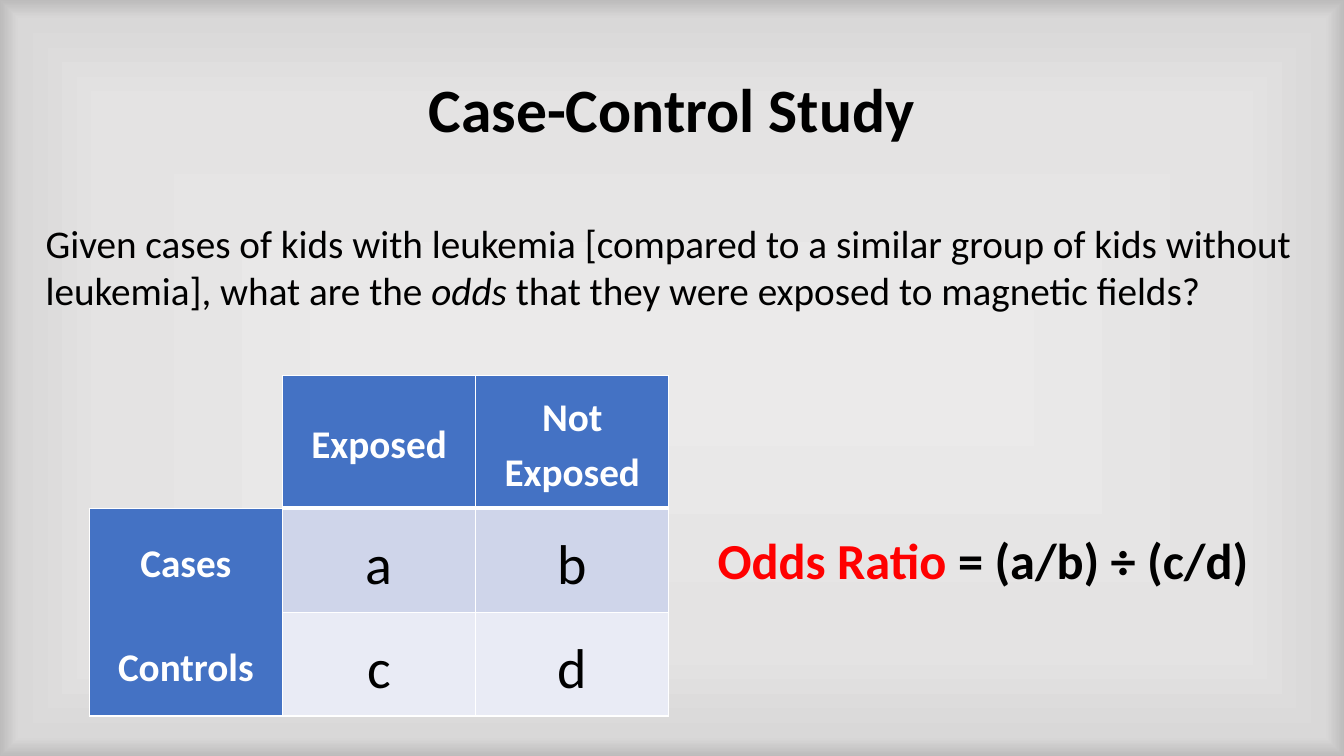
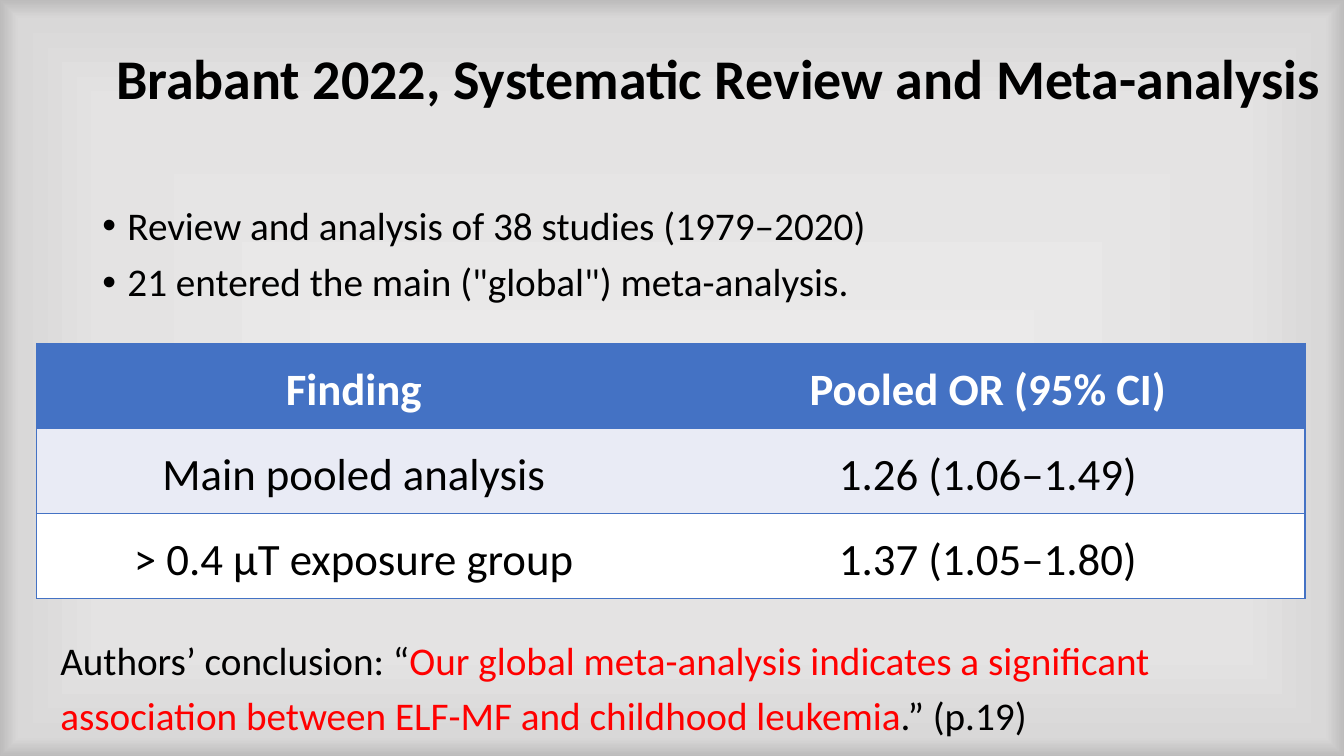
"""Build two slides on case-control evidence for magnetic fields and leukemia."""
from dataclasses import dataclass, replace
from typing import NamedTuple

from lxml import etree
from pptx import Presentation
from pptx.dml.color import RGBColor
from pptx.enum.text import MSO_ANCHOR, PP_ALIGN
from pptx.oxml import parse_xml
from pptx.oxml.ns import nsdecls, qn
from pptx.util import Emu, Pt

EMU_PER_PX = 9525
LEFT, CENTER = PP_ALIGN.LEFT, PP_ALIGN.CENTER
TOP, MIDDLE = MSO_ANCHOR.TOP, MSO_ANCHOR.MIDDLE
BLANK_LAYOUT = 6
SIDES = {"l": "a:lnL", "r": "a:lnR", "t": "a:lnT", "b": "a:lnB"}


@dataclass(frozen=True)
class Theme:
    """Hold the colours and type sizes of the deck."""
    font: str = "Calibri"
    ink: str = "000000"
    paper: str = "FFFFFF"
    accent: str = "4472C4"
    emphasis: str = "FF0000"
    band_dark: str = "CFD5EA"
    band_light: str = "E9EBF5"
    backdrop: tuple = ((0, "EBEAEA"), (72, "E4E3E3"), (95, "D9D8D8"), (100, "BDBCBC"))
    title: int = 44
    long_title: int = 40
    count: int = 40
    formula: int = 36
    finding: int = 32
    body: int = 28
    thin: int = 1
    thick: int = 3


THEME = Theme()


@dataclass(frozen=True)
class Look:
    """Describe the type of a run."""
    size: int
    color: str = THEME.ink
    bold: bool = False
    italic: bool = False


@dataclass(frozen=True)
class Spacing:
    """Describe the setting of a paragraph."""
    align: int = LEFT
    line: float = 1.0
    before: int = 0
    after: int = 0


class Box(NamedTuple):
    """Describe a region in px."""
    left: int
    top: int
    width: int
    height: int

    def region(self, left, top, width, height):
        """Return a box placed relative to this one."""
        return Box(self.left + left, self.top + top, width, height)

    def emu(self):
        """Return the four lengths in EMU."""
        return [px(length) for length in self]


class Entry(NamedTuple):
    """Describe a table cell, with capital edges drawn thick."""
    text: str
    look: Look
    fill: str
    edges: str


PAGE = Box(0, 0, 1280, 720)
BODY = Look(THEME.body)
LOOSE = Spacing(line=1.15, after=8)
CELL = replace(LOOSE, align=CENTER)
HEADING = Spacing(CENTER, 0.9)


def px(length):
    """Turn px into EMU."""
    return Emu(length * EMU_PER_PX)


def set_backdrop(master):
    """Give every slide the shared gradient."""
    master.background.fill.solid()
    holder = master.element.find(".//" + qn("p:bgPr"))
    stops = "".join(
        f'<a:gs pos="{place * 1000}"><a:srgbClr val="{color}"/></a:gs>'
        for place, color in THEME.backdrop)
    gradient = parse_xml(
        f'<a:gradFill {nsdecls("a")} rotWithShape="1"><a:gsLst>{stops}</a:gsLst>'
        '<a:path path="shape"><a:fillToRect l="50000" t="50000" r="50000" b="50000"/>'
        '</a:path></a:gradFill>')
    holder.replace(holder[0], gradient)


def write(paragraph, runs, spacing):
    """Set a paragraph and add its runs."""
    paragraph.alignment = spacing.align
    paragraph.line_spacing = spacing.line
    paragraph.space_before = Pt(spacing.before)
    paragraph.space_after = Pt(spacing.after)
    for words, look in runs:
        run = paragraph.add_run()
        run.text = words
        run.font.name = THEME.font
        run.font.size = Pt(look.size)
        run.font.bold = look.bold
        run.font.italic = look.italic
        run.font.color.rgb = RGBColor.from_string(look.color)


def add_frame(slide, box, anchor=TOP):
    """Add a wrapping text box and return its frame."""
    frame = slide.shapes.add_textbox(*box.emu()).text_frame
    frame.word_wrap = True
    frame.vertical_anchor = anchor
    return frame


def add_statement(slide, box, runs, spacing, anchor=TOP):
    """Add a single paragraph in a box."""
    write(add_frame(slide, box, anchor).paragraphs[0], runs, spacing)


def add_title(slide, box, words, size, anchor):
    """Add a bold centred title."""
    add_statement(slide, box, [(words, Look(size, bold=True))], HEADING, anchor)


def add_bullets(slide, box, points, indent=24):
    """Add a bulleted list."""
    frame = add_frame(slide, box)
    for index, point in enumerate(points):
        paragraph = frame.add_paragraph() if index else frame.paragraphs[0]
        write(paragraph, [(point, BODY)], Spacing(line=0.9, before=10 if index else 0))
        properties = paragraph._p.get_or_add_pPr()
        properties.set("marL", str(px(indent)))
        properties.set("indent", str(px(-indent)))
        etree.SubElement(properties, qn("a:buFont")).set("typeface", "Arial")
        etree.SubElement(properties, qn("a:buChar")).set("char", "•")


def draw_edges(cell, edges, color):
    """Draw the named edges of a cell and clear the others."""
    properties = cell._tc.get_or_add_tcPr()
    for index, (side, tag) in enumerate(SIDES.items()):
        if side in edges.lower():
            weight = THEME.thin if side in edges else THEME.thick
            paint = f'<a:solidFill><a:srgbClr val="{color}"/></a:solidFill>'
        else:
            weight, paint = 0, "<a:noFill/>"
        properties.insert(index, parse_xml(
            f'<{tag} {nsdecls("a")} w="{Pt(weight)}">{paint}</{tag}>'))


def add_grid(slide, box, heights, rows, edge_color):
    """Add a table with equal columns that fill the box."""
    columns = len(rows[0])
    table = slide.shapes.add_table(len(rows), columns, *box.emu()).table
    table.first_row = table.horz_banding = False
    for column in table.columns:
        column.width = px(box.width // columns)
    for row, height, entries in zip(table.rows, heights, rows):
        row.height = px(height)
        for cell, entry in zip(row.cells, entries):
            cell.margin_left = cell.margin_right = px(1)
            cell.margin_top = cell.margin_bottom = px(1)
            cell.vertical_anchor = MIDDLE
            if entry.fill:
                cell.fill.solid()
                cell.fill.fore_color.rgb = RGBColor.from_string(entry.fill)
            else:
                cell.fill.background()
            draw_edges(cell, entry.edges, edge_color)
            runs = [(entry.text, entry.look)] if entry.text else []
            write(cell.text_frame.paragraphs[0], runs, CELL)


def add_exposure_table(slide, box):
    """Add the two-by-two table of cases and controls."""
    label = Look(THEME.body, THEME.paper, True)
    count = Look(THEME.count)
    rows = [
        [Entry("", label, "", "rb")]
        + [Entry(name, label, THEME.accent, "ltrB") for name in ("Exposed", "Not Exposed")],
        [Entry("Cases", label, THEME.accent, "ltr")]
        + [Entry(letter, count, THEME.band_dark, "lTrb") for letter in "ab"],
        [Entry("Controls", label, THEME.accent, "lrb")]
        + [Entry(letter, count, THEME.band_light, "ltrb") for letter in "cd"],
    ]
    add_grid(slide, box, (126, 99, 99), rows, THEME.paper)


def add_findings_table(slide, box):
    """Add the pooled odds ratios."""
    header = Look(THEME.finding, THEME.paper, True)
    plain = Look(THEME.finding)
    findings = (
        ("Finding", "Pooled OR (95% CI)", header, THEME.accent),
        ("Main pooled analysis", "1.26 (1.06–1.49)", plain, THEME.band_light),
        ("> 0.4 µT exposure group", "1.37 (1.05–1.80)", plain, THEME.paper),
    )
    rows = [[Entry(name, look, fill, "ltb"), Entry(ratio, look, fill, "trb")]
            for name, ratio, look, fill in findings]
    add_grid(slide, box, [box.height // len(rows)] * len(rows), rows, THEME.accent)


def case_control_slide(slide, page):
    """Explain the odds ratio of a case-control study."""
    add_title(slide, page.region(88, 38, 1104, 139), "Case-Control Study", THEME.title, MIDDLE)
    add_exposure_table(slide, page.region(85, 358, 552, 324))
    add_statement(slide, page.region(674, 491, 590, 72), [
        ("Odds Ratio ", Look(THEME.formula, THEME.emphasis, True)),
        ("= (a/b) ÷ (c/d)", Look(THEME.formula, bold=True)),
    ], LOOSE)
    add_statement(slide, page.region(34, 204, 1212, 100), [
        ("Given cases of kids with leukemia [compared to a similar group of kids "
         "without leukemia], what are the ", BODY),
        ("odds", replace(BODY, italic=True)),
        (" that they were exposed to magnetic fields?", BODY),
    ], Spacing())


def review_slide(slide, page):
    """Report the findings of the systematic review."""
    add_title(slide, page.region(88, 44, 1192, 133),
              "Brabant 2022, Systematic Review and Meta-analysis", THEME.long_title, TOP)
    add_bullets(slide, page.region(88, 192, 1104, 120), (
        "Review and analysis of 38 studies (1979–2020)",
        '21 entered the main ("global") meta-analysis.',
    ))
    add_findings_table(slide, page.region(35, 327, 1208, 244))
    add_statement(slide, page.region(48, 595, 1209, 110), [
        ("Authors’ conclusion: “", BODY),
        ("Our global meta-analysis indicates a significant association between "
         "ELF-MF and childhood leukemia", replace(BODY, color=THEME.emphasis)),
        (".” (p.19)", BODY),
    ], LOOSE)


def main():
    """Build and save the deck."""
    deck = Presentation()
    deck.slide_width, deck.slide_height = px(PAGE.width), px(PAGE.height)
    set_backdrop(deck.slide_master)
    for build in (case_control_slide, review_slide):
        build(deck.slides.add_slide(deck.slide_layouts[BLANK_LAYOUT]), PAGE)
    deck.save("out.pptx")


if __name__ == "__main__":
    main()
